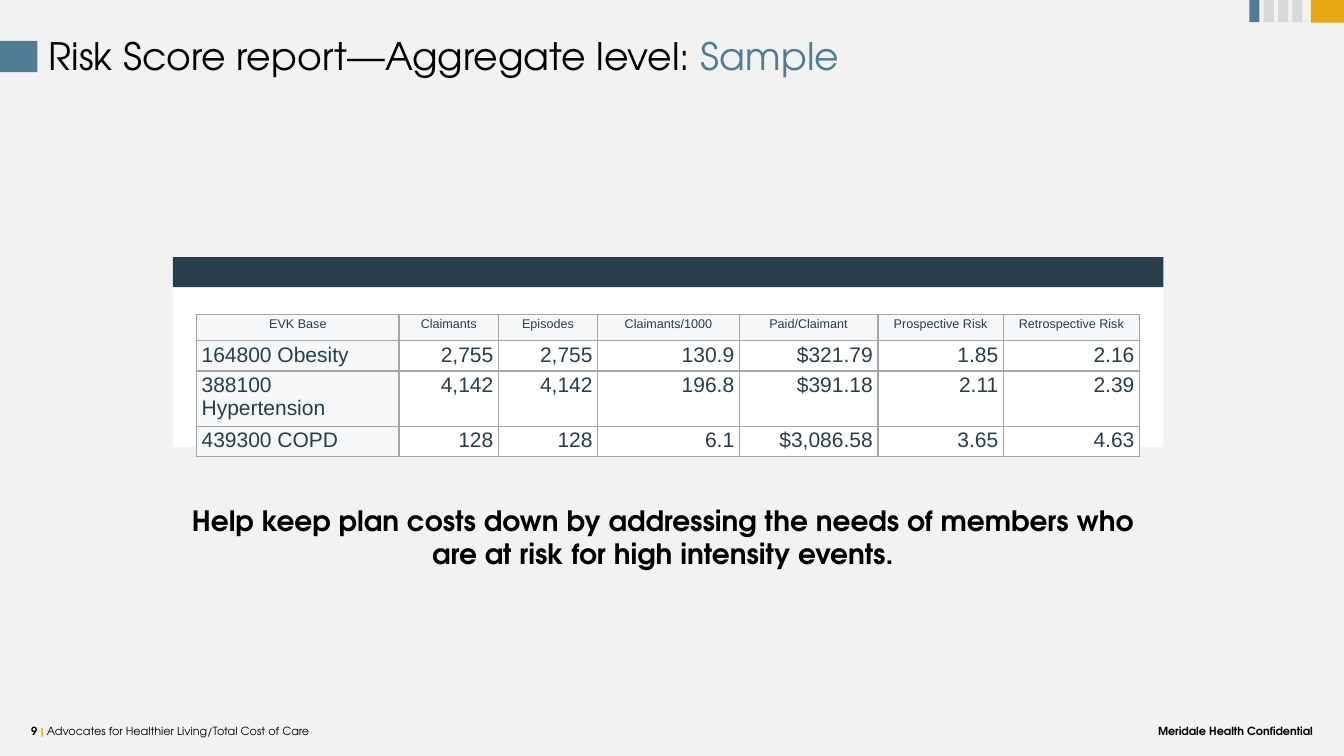
from lxml import etree
from pptx import Presentation
from pptx.dml.color import RGBColor
from pptx.enum.shapes import MSO_SHAPE
from pptx.enum.text import MSO_ANCHOR, PP_ALIGN
from pptx.oxml.ns import qn
from pptx.util import Pt

RECT = MSO_SHAPE.RECTANGLE
LEFT, CENTER, RIGHT = PP_ALIGN.LEFT, PP_ALIGN.CENTER, PP_ALIGN.RIGHT
TOP, MIDDLE = MSO_ANCHOR.TOP, MSO_ANCHOR.MIDDLE

BLACK = RGBColor(0x00, 0x00, 0x00)
WHITE = RGBColor(0xFF, 0xFF, 0xFF)
PAPER = RGBColor(0xF2, 0xF2, 0xF2)
NAVY = RGBColor(0x28, 0x3E, 0x4B)
BLUE = RGBColor(0x51, 0x7C, 0x96)
GOLD = RGBColor(0xE5, 0xA9, 0x13)
GREY = RGBColor(0xD9, 0xD9, 0xD9)
PALE = RGBColor(0xF5, 0xF7, 0xF9)
BORDER = "A6A6A6"
HEADING_FONT, TABLE_FONT = "TeX Gyre Adventor", "Arial"

TITLE = [("Risk Score report—Aggregate level: ", BLACK), ("Sample", BLUE)]
MESSAGE = [("Help keep plan costs down by addressing the needs of members "
            "who are at risk for high intensity events.", BLACK)]
PAGE = [("9 ", BLACK, True), ("| ", GOLD, True),
        ("Advocates for Healthier Living/Total Cost of Care", BLACK, False)]
NOTICE = [("Meridale Health Confidential", BLACK)]

ROWS = [
    ("EVK Base", "Claimants", "Episodes", "Claimants/1000", "Paid/Claimant",
     "Prospective Risk", "Retrospective Risk"),
    ("164800 Obesity", "2,755", "2,755", "130.9", "$321.79", "1.85", "2.16"),
    ("388100 Hypertension", "4,142", "4,142", "196.8", "$391.18", "2.11", "2.39"),
    ("439300 COPD", "128", "128", "6.1", "$3,086.58", "3.65", "4.63"),
]
COL_WIDTHS = [289.4, 141.8, 141.8, 202.3, 198, 179.3, 194.4]
ROW_HEIGHT = 37.4
BARS = [BLUE, GREY, GREY, GREY]
BAR_LEFT, BAR_PITCH = 1784.9, 20.4


def add_rect(s, x, y, w, h, color):
    sp = s.shapes.add_shape(RECT, Pt(x), Pt(y), Pt(w), Pt(h))
    sp.shadow.inherit = False
    sp.fill.solid()
    sp.fill.fore_color.rgb = color
    sp.line.fill.background()


def add_text(s, x, y, w, h, runs, size, bold=False, align=LEFT, anchor=TOP):
    """Add one paragraph; each run is (text, color) or (text, color, bold)."""
    tf = s.shapes.add_textbox(Pt(x), Pt(y), Pt(w), Pt(h)).text_frame
    tf.word_wrap = True
    tf.vertical_anchor = anchor
    p = tf.paragraphs[0]
    p.alignment = align
    p.font.name, p.font.size, p.font.bold = HEADING_FONT, Pt(size), bold
    for text, color, *own_bold in runs:
        r = p.add_run()
        r.text = text
        r.font.color.rgb = color
        if own_bold:
            r.font.bold = own_bold[0]
    return tf


def add_borders(cell):
    tc_pr = cell._tc.get_or_add_tcPr()
    for i, side in enumerate(("a:lnL", "a:lnR", "a:lnT", "a:lnB")):
        ln = etree.Element(qn(side), w=str(Pt(2.25)))
        fill = etree.SubElement(ln, qn("a:solidFill"))
        etree.SubElement(fill, qn("a:srgbClr"), val=BORDER)
        tc_pr.insert(i, ln)


def add_risk_table(s, x, y):
    table = s.shapes.add_table(len(ROWS), len(COL_WIDTHS), Pt(x), Pt(y),
                               Pt(sum(COL_WIDTHS)), Pt(ROW_HEIGHT * len(ROWS))).table
    for col, width in zip(table.columns, COL_WIDTHS):
        col.width = Pt(width)
    for i, values in enumerate(ROWS):
        table.rows[i].height = Pt(ROW_HEIGHT)
        for j, value in enumerate(values):
            cell = table.cell(i, j)
            cell.text = value
            cell.fill.solid()
            cell.fill.fore_color.rgb = PALE if i == 0 or j == 0 else WHITE
            add_borders(cell)
            p = cell.text_frame.paragraphs[0]
            p.alignment = CENTER if i == 0 else LEFT if j == 0 else RIGHT
            p.font.name, p.font.bold = TABLE_FONT, False
            p.font.size = Pt(18 if i == 0 else 30)
            p.font.color.rgb = NAVY


def main():
    prs = Presentation()
    prs.slide_width, prs.slide_height = Pt(1920), Pt(1080)
    s = prs.slides.add_slide(prs.slide_layouts[6])
    s.background.fill.solid()
    s.background.fill.fore_color.rgb = PAPER

    add_text(s, 37.4, 1031.8, 745.2, 26.6, PAGE, 16)
    add_text(s, 1582.6, 1031.8, 300.2, 26.6, NOTICE, 16, bold=True, align=RIGHT)

    add_rect(s, 247, 372.2, 1414.8, 266.4, WHITE)
    add_rect(s, 247, 367.2, 1414.8, 43.2, NAVY)

    add_text(s, 62.6, 42.5, 1857.4, 84.2, TITLE, 54)
    add_rect(s, 0, 58.3, 53.3, 44.6, BLUE)

    add_rect(s, 1872.7, 0, 47.3, 32.4, GOLD)
    for i, color in enumerate(BARS):
        add_rect(s, BAR_LEFT + i * BAR_PITCH, 0, 14.4, 31.7, color)

    add_risk_table(s, 280.8, 449.3)
    tf = add_text(s, 245.5, 714.2, 1402.6, 105.1, MESSAGE, 40, bold=True,
                  align=CENTER, anchor=MIDDLE)
    tf.margin_left = tf.margin_right = tf.margin_top = tf.margin_bottom = Pt(4.3)
    prs.save("out.pptx")


if __name__ == "__main__":
    main()
